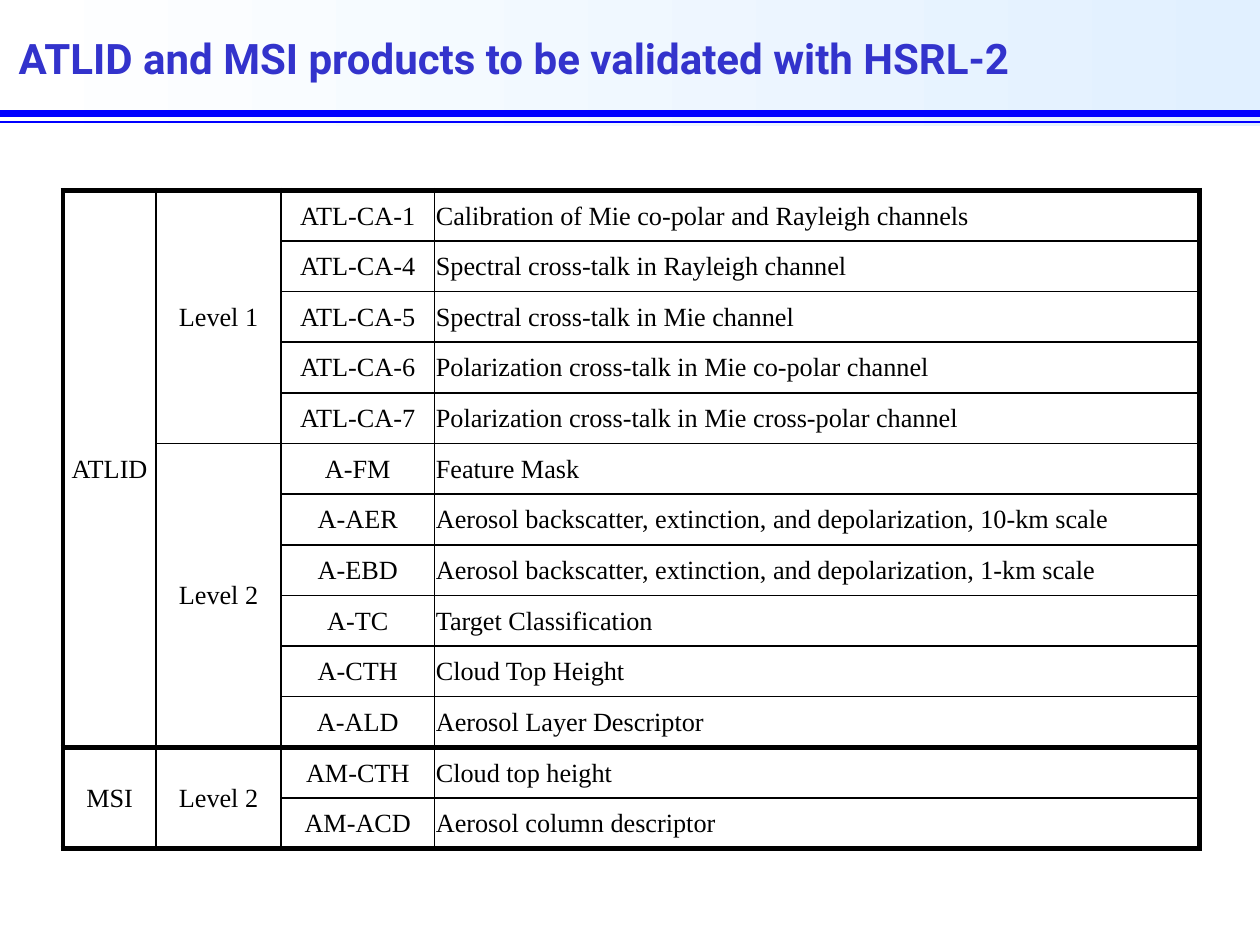
from lxml import etree
from pptx import Presentation
from pptx.dml.color import RGBColor
from pptx.enum import shapes, text
from pptx.oxml.ns import qn
from pptx.util import Inches, Pt

TITLE = "ATLID and MSI products to be validated with HSRL-2"
# instrument -> list of (level, list of (code, description))
PRODUCTS = {
    "ATLID": [
        ("Level 1", [
            ("ATL-CA-1", "Calibration of Mie co-polar and Rayleigh channels"),
            ("ATL-CA-4", "Spectral cross-talk in Rayleigh channel"),
            ("ATL-CA-5", "Spectral cross-talk in Mie channel"),
            ("ATL-CA-6", "Polarization cross-talk in Mie co-polar channel"),
            ("ATL-CA-7", "Polarization cross-talk in Mie cross-polar channel"),
        ]),
        ("Level 2", [
            ("A-FM", "Feature Mask"),
            ("A-AER", "Aerosol backscatter, extinction, and depolarization, 10-km scale"),
            ("A-EBD", "Aerosol backscatter, extinction, and depolarization, 1-km scale"),
            ("A-TC", "Target Classification"),
            ("A-CTH", "Cloud Top Height"),
            ("A-ALD", "Aerosol Layer Descriptor"),
        ]),
    ],
    "MSI": [
        ("Level 2", [
            ("AM-CTH", "Cloud top height"),
            ("AM-ACD", "Aerosol column descriptor"),
        ]),
    ],
}
COLORS = {"title": "3333CC", "rule": "0000FF", "ink": "000000",
          "band_left": "FFFFFF", "band_right": "E1F0FF"}
COLUMNS = [0.74, 0.99, 1.22, 6.07]
TABLE_LEFT, TABLE_TOP, TABLE_HEIGHT = 0.5, 1.51, 5.23
THICK, THIN = 3, 1


def color(name):
    return RGBColor.from_string(COLORS[name])


def write(frame, words, size=15, font="Times New Roman", ink="ink", bold=False,
          align=text.PP_ALIGN.CENTER):
    para = frame.paragraphs[0]
    para.alignment = align
    span = para.add_run()
    span.text = words
    span.font.size, span.font.name, span.font.bold = Pt(size), font, bold
    span.font.color.rgb = color(ink)


def set_borders(cell, widths):
    properties = cell._tc.get_or_add_tcPr()
    for index, (side, width) in enumerate(widths.items()):
        line = etree.Element(qn(f"a:ln{side}"), w=str(Pt(width)))
        fill = etree.SubElement(line, qn("a:solidFill"))
        etree.SubElement(fill, qn("a:srgbClr"), val=COLORS["ink"])
        properties.insert(index, line)


def fill_block(table, row, column, height, words, top, bottom):
    """Fill a cell that spans height rows; top and bottom are border widths."""
    last = len(COLUMNS) - 1
    widths = {"L": THICK if column == 0 else THIN,
              "R": THICK if column == last else THIN, "T": top, "B": bottom}
    for offset in range(height):
        part = table.cell(row + offset, column)
        part.fill.background()
        set_borders(part, widths)
    cell = table.cell(row, column)
    if height > 1:
        cell.merge(table.cell(row + height - 1, column))
    cell.vertical_anchor = text.MSO_ANCHOR.MIDDLE
    cell.margin_left = cell.margin_right = cell.margin_top = Inches(0.01)
    cell.margin_bottom = 0
    write(cell.text_frame, words,
          align=text.PP_ALIGN.LEFT if column == last else text.PP_ALIGN.CENTER)


deck = Presentation()
deck.slide_width, deck.slide_height = Inches(10), Inches(7.5)
page = deck.slides.add_slide(deck.slide_layouts[6])

# Header band
band = page.shapes.add_shape(shapes.MSO_SHAPE.RECTANGLE, 0, 0, Inches(10), Inches(1))
band.shadow.inherit = False
band.line.fill.background()
band.fill.gradient()
band.fill.gradient_angle = 0
for stop, name in zip(band.fill.gradient_stops, ("band_left", "band_right")):
    stop.color.rgb = color(name)

# Double rule
for y, width in ((0.9, 4), (0.97, 1.5)):
    rule = page.shapes.add_connector(
        shapes.MSO_CONNECTOR.STRAIGHT, 0, Inches(y), Inches(10), Inches(y))
    rule.line.color.rgb = color("rule")
    rule.line.width = Pt(width)
    etree.SubElement(rule._element.spPr, qn("a:effectLst"))

# Title
box = page.shapes.add_textbox(Inches(0.05), 0, Inches(9.25), Inches(0.92))
box.text_frame.word_wrap = True
box.text_frame.vertical_anchor = text.MSO_ANCHOR.MIDDLE
write(box.text_frame, TITLE, size=24, font="Roboto", ink="title", bold=True,
      align=text.PP_ALIGN.LEFT)

# Product table
row_count = sum(len(items) for levels in PRODUCTS.values() for _, items in levels)
table = page.shapes.add_table(
    row_count, len(COLUMNS), Inches(TABLE_LEFT), Inches(TABLE_TOP),
    Inches(sum(COLUMNS)), Inches(TABLE_HEIGHT)).table
table.first_row = table.horz_banding = False
for column, width in zip(table.columns, COLUMNS):
    column.width = Inches(width)

row = 0
for instrument, levels in PRODUCTS.items():
    first = row
    end = first + sum(len(items) for _, items in levels)
    fill_block(table, first, 0, end - first, instrument, THICK, THICK)

    def edge(line):
        return THICK if line in (first, end) else THIN

    for level, items in levels:
        height = len(items)
        fill_block(table, row, 1, height, level, edge(row), edge(row + height))
        for item in items:
            for column, words in enumerate(item, start=2):
                fill_block(table, row, column, 1, words, edge(row), edge(row + 1))
            row += 1

deck.save("out.pptx")
